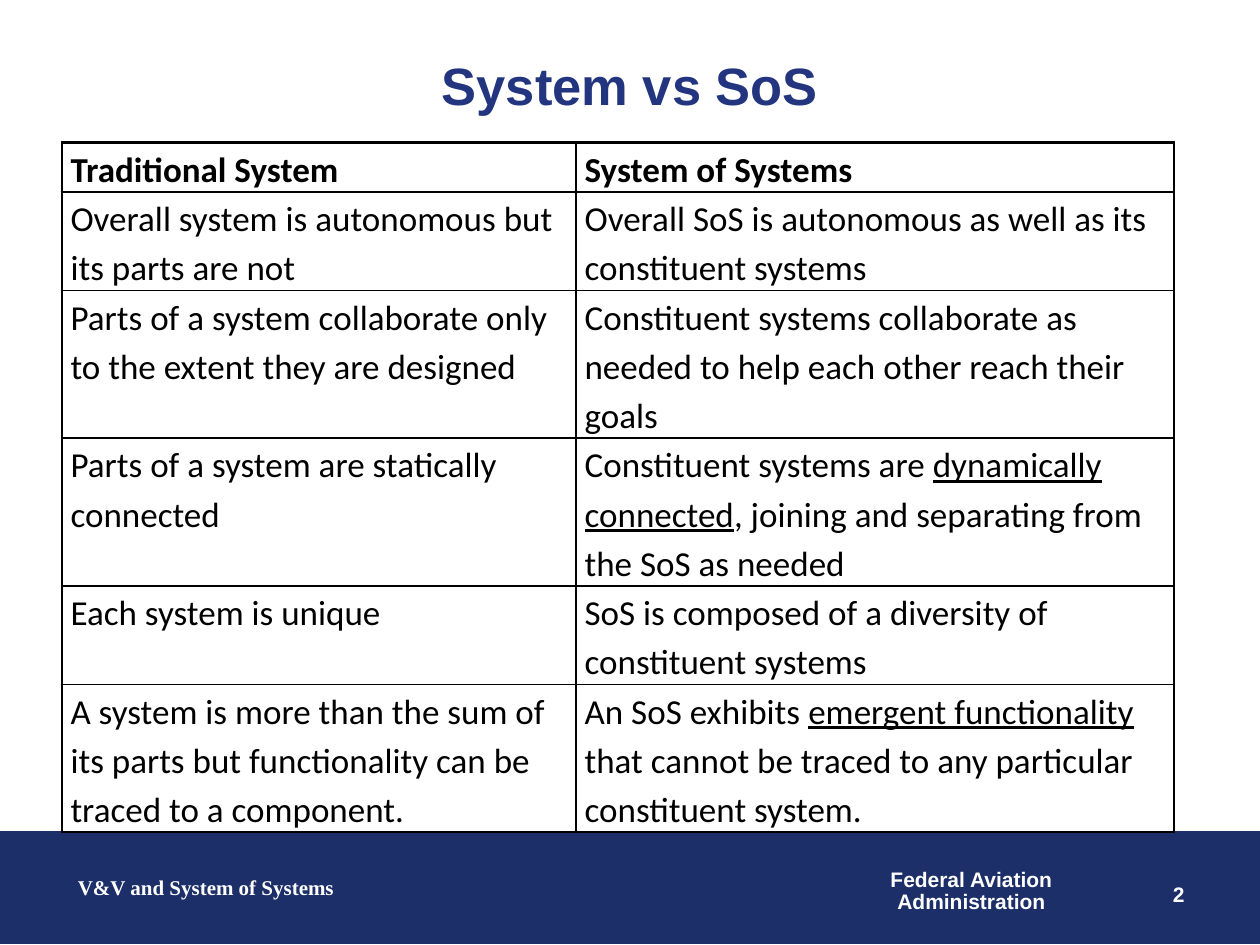
"""Build the slide comparing a traditional system with a system of systems."""
import pptx
import pptx.enum.shapes
import pptx.enum.text
import pptx.dml.color
import pptx.oxml
import pptx.oxml.ns
import pptx.util

Inches, Pt = pptx.util.Inches, pptx.util.Pt
ALIGN = pptx.enum.text.PP_ALIGN
COLORS = {"banner": "1D2F68", "title": "23357F", "ink": "000000", "white": "FFFFFF"}

TITLE = "System vs SoS"
ROWS = [
    (["Traditional System"], ["System of Systems"]),
    (["Overall system is autonomous but its parts are not"],
     ["Overall SoS is autonomous as well as its constituent systems"]),
    (["Parts of a system collaborate only to the extent they are designed"],
     ["Constituent systems collaborate as needed to help each other reach their goals"]),
    (["Parts of a system are statically connected"],
     ["Constituent systems are ", "dynamically connected",
      ", joining and separating from the SoS as needed"]),
    (["Each system is unique"],
     ["SoS is composed of a diversity of constituent systems"]),
    (["A system is more than the sum of its parts but functionality can be "
      "traced to a component."],
     ["An SoS exhibits ", "emergent functionality ",
      "that cannot be traced to any particular constituent system."]),
]
COLUMN_WIDTHS = [4.08, 4.75]
ROW_HEIGHTS = [0.39, 0.77, 0.77, 1.16, 0.77, 1.06]
FOOTERS = [
    (["Federal Aviation", "Administration"], (6.96, 6.86, 1.5, 0.44),
     "Arial", ALIGN.CENTER, 0.85, False),
    (["V&V and System of Systems"], (0.52, 6.89, 5.96, 0.5),
     "Times New Roman", ALIGN.LEFT, 1, True),
    (["2"], (7.17, 6.95, 2.33, 0.4), "Arial", ALIGN.RIGHT, 1, True),
]


def rgb(name):
    return pptx.dml.color.RGBColor.from_string(COLORS[name])


def add_span(para, text, font, size, color, bold=False, underline=False):
    span = para.add_run()
    span.text = text
    span.font.name, span.font.size = font, Pt(size)
    span.font.bold, span.font.underline = bold, underline
    span.font.color.rgb = rgb(color)


def set_borders(cell, widths):
    properties = cell._tc.get_or_add_tcPr()
    for position, (side, width) in enumerate(widths.items()):
        properties.insert(position, pptx.oxml.parse_xml(
            f'<a:ln{side} {pptx.oxml.ns.nsdecls("a")} w="{Pt(width)}"><a:solidFill>'
            f'<a:srgbClr val="{COLORS["ink"]}"/></a:solidFill></a:ln{side}>'))


def add_banner(page):
    banner = page.shapes.add_shape(pptx.enum.shapes.MSO_SHAPE.RECTANGLE,
                                   *map(Inches, (0, 6.6, 10, 0.89)))
    banner.shadow.inherit = False
    banner.fill.solid()
    banner.fill.fore_color.rgb = banner.line.color.rgb = rgb("banner")
    banner.line.width = Pt(0.75)


def format_title(page):
    title = page.shapes.title
    title.left, title.top, title.width, title.height = map(Inches, (0.5, 0.48, 9, 0.8))
    frame = title.text_frame
    frame.margin_left = frame.margin_top = frame.margin_right = frame.margin_bottom = 0
    frame.vertical_anchor = pptx.enum.text.MSO_ANCHOR.TOP
    para = frame.paragraphs[0]
    para.alignment, para.line_spacing = ALIGN.CENTER, Pt(32)
    add_span(para, TITLE, "Arial", 30, "title", bold=True)


def add_comparison(page):
    frame = page.shapes.add_table(
        len(ROWS), len(COLUMN_WIDTHS), Inches(0.49), Inches(1.13),
        Inches(sum(COLUMN_WIDTHS)), Inches(sum(ROW_HEIGHTS)))
    table = frame.table
    table.horz_banding = False
    for column, width in zip(table.columns, COLUMN_WIDTHS):
        column.width = Inches(width)
    last_row, last_column = len(ROWS) - 1, len(COLUMN_WIDTHS) - 1
    for r, (row, height) in enumerate(zip(ROWS, ROW_HEIGHTS)):
        table.rows[r].height = Inches(height)
        for c, spans in enumerate(row):
            cell = table.cell(r, c)
            cell.fill.background()
            cell.margin_left = cell.margin_right = Inches(0.07)
            cell.margin_top = cell.margin_bottom = 0
            set_borders(cell, {
                "L": 1.5 if c == 0 else 1,
                "R": 1.5 if c == last_column else 1,
                "T": 1.5 if r <= 1 else 1,
                "B": 1.5 if r in (0, last_row) else 1,
            })
            para = cell.text_frame.paragraphs[0]
            para.line_spacing, para.space_after = 1.15, Pt(10)
            for index, text in enumerate(spans):
                add_span(para, text, "Calibri", 20, "ink",
                         bold=r == 0, underline=index == 1)


def add_footer(page, lines, place, font, align, spacing, wrap):
    box = page.shapes.add_textbox(*map(Inches, place))
    frame = box.text_frame
    frame.word_wrap = wrap
    for index, text in enumerate(lines):
        para = frame.add_paragraph() if index else frame.paragraphs[0]
        para.alignment, para.line_spacing = align, spacing
        add_span(para, text, font, 12, "white", bold=True)


def main():
    deck = pptx.Presentation()
    deck.slide_width, deck.slide_height = Inches(10), Inches(7.5)
    page = deck.slides.add_slide(deck.slide_layouts[5])
    add_banner(page)
    format_title(page)
    add_comparison(page)
    for footer in FOOTERS:
        add_footer(page, *footer)
    deck.save("out.pptx")


if __name__ == "__main__":
    main()
